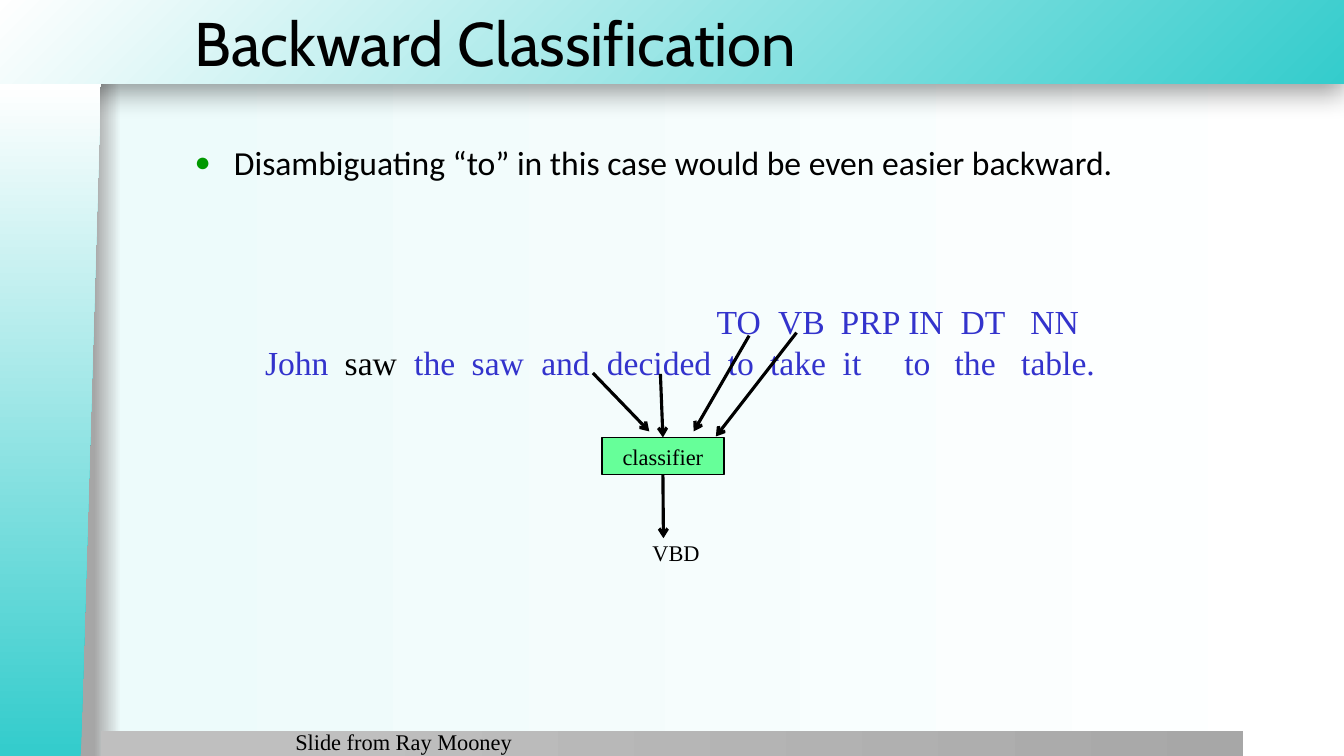
from dataclasses import dataclass

from pptx import Presentation
from pptx import util as u
from pptx.dml.color import RGBColor
from pptx.enum import shapes as sh, text as tx
from pptx.oxml import parse_xml
from pptx.oxml.ns import nsdecls, qn

PX = 9144  # 100 px to the inch
BLACK = RGBColor(0x00, 0x00, 0x00)
BLUE = RGBColor(0x33, 0x33, 0xCC)
GREEN = RGBColor(0x00, 0x99, 0x00)
MINT = RGBColor(0x66, 0xFF, 0x99)
TEAL = RGBColor(0x34, 0xCC, 0xCC)
WHITE = RGBColor(0xFF, 0xFF, 0xFF)
ICE = RGBColor(0xED, 0xFB, 0xFB)
GRAY = RGBColor(0xA6, 0xA6, 0xA6)
SILVER = RGBColor(0xBF, 0xBF, 0xBF)
STEEL = RGBColor(0xA7, 0xA7, 0xA7)
SERIF = "Times New Roman"
LINEAR = '<a:lin ang="0" scaled="0"/>'
CORNER = '<a:path path="circle"><a:fillToRect l="100000" t="100000"/></a:path>'
SHADOW = ('<a:outerShdw blurRad="254000" dist="76200" dir="5400000" algn="t" rotWithShape="0">'
          '<a:srgbClr val="000000"><a:alpha val="40000"/></a:srgbClr></a:outerShdw>')

Area = tuple[int, int, int, int]
Stops = list[tuple[int, RGBColor]]


@dataclass
class Panel:
    kind: sh.MSO_SHAPE
    area: Area
    stops: Stops
    way: str = LINEAR
    turn: int = 0
    effect: str = ""


@dataclass
class Arrow:
    start: tuple[int, int]
    end: tuple[int, int]
    out_of: int | None = None  # side of the classifier box
    into: int | None = None


PANELS = [
    Panel(sh.MSO_SHAPE.RECTANGLE, (-1, 0, 1334, 83), [(0, TEAL), (100, WHITE)],
          way=CORNER, effect=SHADOW),
    Panel(sh.MSO_SHAPE.RECTANGLE, (100, 725, 1133, 26), [(20, SILVER), (100, STEEL)]),
    Panel(sh.MSO_SHAPE.FLOWCHART_MANUAL_INPUT, (-284, 367, 668, 100),
          [(1, TEAL), (100, WHITE)], turn=270),
]
ARROWS = [
    Arrow((588, 370), (644, 428)),
    Arrow((743, 333), (688, 428)),
    Arrow((655, 371), (658, 434), into=0),
    Arrow((658, 471), (658, 534), out_of=2),
    Arrow((790, 330), (710, 433)),
]
TAGS = ["TO", "VB", "PRP", "IN", "DT", "NN"]
TAG_STOPS = [448, 509, 571, 638, 690, 759]
WORDS = ["the", "saw", "and", "decided", "to", "take", "it", "to", "the", "table."]
WORD_STOPS = [79, 148, 205, 274, 339, 459, 501, 573, 634, 684, 750]


def scale(area: Area) -> list[int]:
    return [n * PX for n in area]


def blend(root, stops: Stops, way: str) -> None:
    """Swap the default gradient under root for the given stops."""
    marks = "".join(f'<a:gs pos="{pos * 1000}"><a:srgbClr val="{color}"/></a:gs>'
                    for pos, color in stops)
    old = next(root.iter(qn("a:gradFill")))
    old.getparent().replace(old, parse_xml(
        f'<a:gradFill {nsdecls("a")} rotWithShape="1"><a:gsLst>{marks}</a:gsLst>{way}</a:gradFill>'))


def add_panel(slide, panel: Panel) -> None:
    shape = slide.shapes.add_shape(panel.kind, *scale(panel.area))
    shape.shadow.inherit = False
    shape.line.fill.background()
    shape.fill.gradient()
    blend(shape.element.spPr, panel.stops, panel.way)
    if panel.turn:
        shape.rotation = panel.turn
        shape.element.spPr.find(qn("a:xfrm")).set("flipV", "1")
    if panel.effect:
        glow = shape.element.spPr.find(qn("a:effectLst"))
        glow.append(parse_xml(panel.effect.replace(" ", f' {nsdecls("a")} ', 1)))


def add_run(para, words: str, size: int, face: str = SERIF, color: RGBColor = BLACK) -> None:
    run = para.add_run()
    run.text = words
    for name, value in {"size": u.Pt(size), "name": face}.items():
        setattr(run.font, name, value)
    run.font.color.rgb = color


def set_frame(frame, anchor: tx.MSO_ANCHOR = tx.MSO_ANCHOR.TOP) -> None:
    look = {"word_wrap": True, "auto_size": tx.MSO_AUTO_SIZE.NONE, "vertical_anchor": anchor,
            "margin_left": 10 * PX, "margin_right": 10 * PX,
            "margin_top": 5 * PX, "margin_bottom": 5 * PX}
    for name, value in look.items():
        setattr(frame, name, value)


def place(slide, shape, area: Area) -> None:
    """Move a placeholder in front of the panels."""
    slide.shapes.element.append(shape.element)
    for name, value in zip(("left", "top", "width", "height"), scale(area)):
        setattr(shape, name, value)


def add_text(slide, area: Area):
    frame = slide.shapes.add_textbox(*scale(area)).text_frame
    set_frame(frame)
    return frame


def set_tabs(para, stops: list[int]) -> None:
    tabs = "".join(f'<a:tab pos="{n * PX}" algn="l"/>' for n in stops)
    para._p.get_or_add_pPr().append(
        parse_xml(f'<a:tabLst {nsdecls("a")}>{tabs}</a:tabLst>'))


def add_bullet(para) -> None:
    props = para._p.get_or_add_pPr()
    props.set("marL", str(39 * PX))
    props.set("indent", str(-39 * PX))
    for mark in (f'<a:buClr {nsdecls("a")}><a:srgbClr val="{GREEN}"/></a:buClr>',
                 f'<a:buSzPct {nsdecls("a")} val="80000"/>',
                 f'<a:buChar {nsdecls("a")} char="●"/>'):
        props.append(parse_xml(mark))


def add_arrow(slide, arrow: Arrow, box) -> None:
    line = slide.shapes.add_connector(
        sh.MSO_CONNECTOR.STRAIGHT, *scale(arrow.start + arrow.end))
    if arrow.out_of is not None:
        line.begin_connect(box, arrow.out_of)
    if arrow.into is not None:
        line.end_connect(box, arrow.into)
    line.line.color.rgb = BLACK
    line.line.width = u.Pt(2.25)
    props = line.element.spPr
    props.find(qn("a:ln")).append(parse_xml(f'<a:tailEnd {nsdecls("a")} type="arrow"/>'))
    props.append(parse_xml(f'<a:effectLst {nsdecls("a")}/>'))


def add_box(slide):
    box = slide.shapes.add_shape(sh.MSO_SHAPE.RECTANGLE, *scale((597, 434, 121, 37)))
    box.shadow.inherit = False
    box.fill.solid()
    box.fill.fore_color.rgb = MINT
    box.line.color.rgb = BLACK
    box.line.width = u.Pt(1)
    set_frame(box.text_frame, tx.MSO_ANCHOR.MIDDLE)
    para = box.text_frame.paragraphs[0]
    para.alignment = tx.PP_ALIGN.CENTER
    add_run(para, "classifier", 16)
    return box


def add_sentence(slide) -> None:
    frame = add_text(slide, (253, 294, 851, 91))
    tags, words = frame.paragraphs[0], frame.add_paragraph()
    set_tabs(tags, TAG_STOPS)
    add_run(tags, "".join("\t" + tag for tag in TAGS), 24, color=BLUE)
    set_tabs(words, WORD_STOPS)
    add_run(words, "John\t", 24, color=BLUE)
    add_run(words, "saw", 24)
    add_run(words, "".join("\t" + word for word in WORDS), 24, color=BLUE)


def main() -> None:
    deck = Presentation()
    deck.slide_width, deck.slide_height = 1333 * PX, 750 * PX
    slide = deck.slides.add_slide(deck.slide_layouts[1])
    slide.background.fill.gradient()
    blend(slide.element, [(7, GRAY), (9, ICE), (100, WHITE)], LINEAR)
    for panel in PANELS:
        add_panel(slide, panel)

    title, body = slide.shapes.title, slide.placeholders[1]
    place(slide, title, (183, 0, 1151, 83))
    set_frame(title.text_frame, tx.MSO_ANCHOR.MIDDLE)
    head = title.text_frame.paragraphs[0]
    head.alignment = tx.PP_ALIGN.LEFT
    add_run(head, "Backward Classification", 44, "Cabin")
    place(slide, body, (183, 136, 1050, 579))
    set_frame(body.text_frame)
    point = body.text_frame.paragraphs[0]
    add_bullet(point)
    add_run(point, "Disambiguating “to” in this case would be even easier backward.", 24, "Calibri")

    add_sentence(slide)
    box = add_box(slide)
    for arrow in ARROWS:
        add_arrow(slide, arrow, box)
    result = add_text(slide, (618, 530, 105, 37)).paragraphs[0]
    result.alignment = tx.PP_ALIGN.CENTER
    add_run(result, "VBD", 16)
    add_run(add_text(slide, (283, 717, 342, 25)).paragraphs[0], "Slide from Ray Mooney", 16)
    deck.save("out.pptx")


if __name__ == "__main__":
    main()
